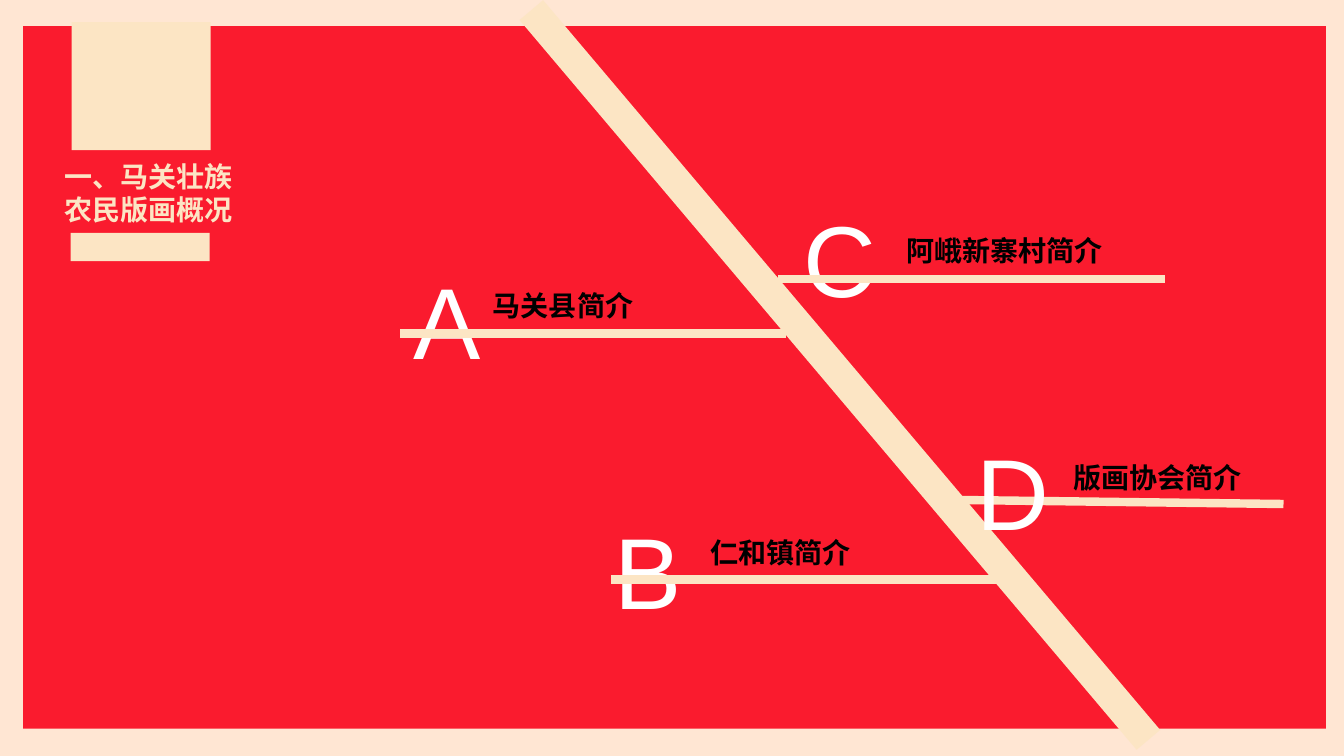
from lxml import etree
from pptx import Presentation
from pptx.dml.color import RGBColor
from pptx.enum.shapes import MSO_CONNECTOR, MSO_SHAPE
from pptx.enum.text import MSO_ANCHOR, MSO_AUTO_SIZE, PP_ALIGN
from pptx.oxml.ns import qn
from pptx.util import Pt

RECTANGLE = MSO_SHAPE.RECTANGLE
STRAIGHT = MSO_CONNECTOR.STRAIGHT
LEFT = PP_ALIGN.LEFT
TOP = MSO_ANCHOR.TOP
NO_AUTOFIT = MSO_AUTO_SIZE.NONE

EMU_PER_PX = 9144  # 100 px to the inch
TITLE_ONLY = 5
COLORS = {
    "border": "FFE6D3",
    "red": "FA061D",
    "cream": "FCE5C4",
    "white": "FFFFFF",
    "black": "000000",
}
TITLE_FORMAT = {"name": "Calibri", "size": Pt(20), "bold": True}
LABEL_FORMAT = TITLE_FORMAT
LETTER_FORMAT = {"name": "Arial", "size": Pt(72), "bold": False}

# letter, its box, label, its box, rule from and to
BRANCHES = [
    ("A", (400, 252, 82, 131), "马关县简介", (479, 281, 229, 44), (397, 331, 780, 331)),
    ("B", (600, 500, 84, 131), "仁和镇简介", (695, 526, 229, 44), (606, 575, 989, 575)),
    ("C", (787, 190, 83, 131), "阿峨新寨村简介", (889, 227, 229, 44), (772, 277, 1155, 277)),
    ("D", (959, 421, 77, 130), "版画协会简介", (1055, 452, 217, 44), (950, 496, 1273, 500)),
]


def px(*lengths):
    return [length * EMU_PER_PX for length in lengths]


def rgb(color):
    return RGBColor.from_string(COLORS[color])


def add_block(slide, box, color):
    block = slide.shapes.add_shape(RECTANGLE, *px(*box))
    block.shadow.inherit = False
    block.fill.solid()
    block.fill.fore_color.rgb = rgb(color)
    block.line.fill.background()
    return block


def set_opacity(block, percent):
    tint = block._element.spPr.find(qn("a:solidFill"))[0]
    etree.SubElement(tint, qn("a:alpha"), val=str(percent * 1000))


def write_lines(frame, lines, font_format, color):
    frame.auto_size = NO_AUTOFIT
    frame.vertical_anchor = TOP
    for index, line in enumerate(lines):
        paragraph = frame.add_paragraph() if index else frame.paragraphs[0]
        paragraph.alignment = LEFT
        paragraph.line_spacing = 1.0
        run = paragraph.add_run()
        run.text = line
        run.font.color.rgb = rgb(color)
        for attribute, value in font_format.items():
            setattr(run.font, attribute, value)


def add_text(slide, box, text, font_format, color):
    frame = slide.shapes.add_textbox(*px(*box)).text_frame
    frame.word_wrap = True
    write_lines(frame, [text], font_format, color)


def add_rule(slide, ends, width):
    rule = slide.shapes.add_connector(STRAIGHT, *px(*ends))
    rule.line.color.rgb = rgb("cream")
    rule.line.width = Pt(width)
    etree.SubElement(rule._element.spPr, qn("a:effectLst"))


def place_title(slide, box, lines):
    title = slide.shapes.title
    title.left, title.top, title.width, title.height = px(*box)
    title.text_frame.word_wrap = False
    write_lines(title.text_frame, lines, TITLE_FORMAT, "cream")


def main():
    deck = Presentation()
    deck.slide_width, deck.slide_height = px(1333, 750)
    slide = deck.slides.add_slide(deck.slide_layouts[TITLE_ONLY])
    slide.background.fill.solid()
    slide.background.fill.fore_color.rgb = rgb("border")

    # Red panel, sent behind the title
    panel = add_block(slide, (23, 26, 1292, 697), "red")
    set_opacity(panel, 90)
    slide.shapes.title._element.addprevious(panel._element)

    # Title between two cream blocks
    place_title(slide, (54, 153, 188, 77), ["一、马关壮族", "农民版画概况"])
    add_block(slide, (71, 22, 138, 127), "cream")
    add_block(slide, (70, 231, 138, 28), "cream")

    # Branches: the rules cross over A, B and C
    *crossed, (last_letter, last_box, *_) = BRANCHES
    for letter, letter_box, *_ in crossed:
        add_text(slide, letter_box, letter, LETTER_FORMAT, "white")
    for _, _, label, label_box, ends in BRANCHES:
        add_text(slide, label_box, label, LABEL_FORMAT, "black")
        add_rule(slide, ends, 6)

    # Diagonal trunk, with D in front of it
    add_rule(slide, (527, 10, 1139, 734), 22)
    add_text(slide, last_box, last_letter, LETTER_FORMAT, "white")

    deck.save("out.pptx")


if __name__ == "__main__":
    main()
